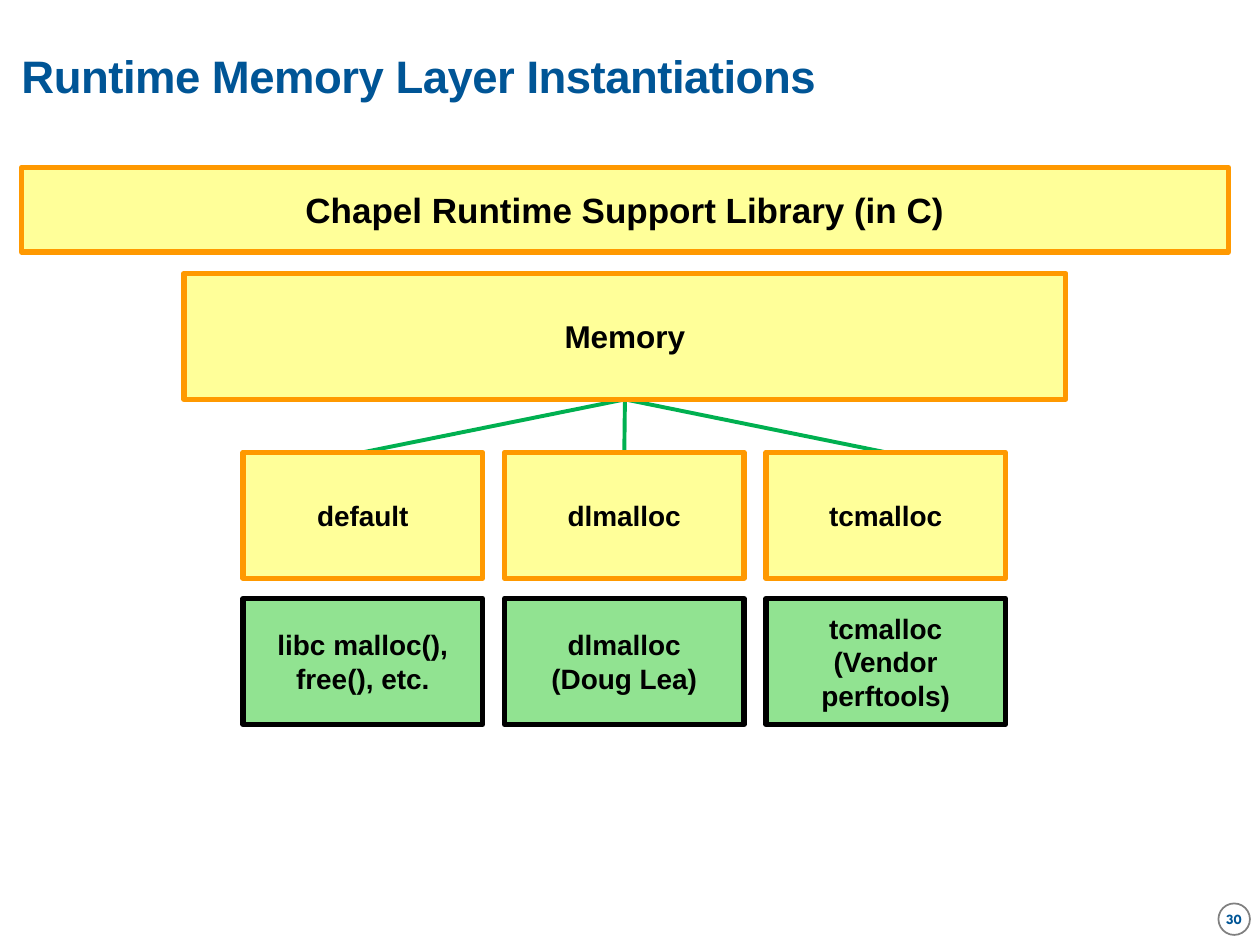
import pptx
import pptx.dml.color
import pptx.enum.shapes
import pptx.enum.text
import pptx.oxml.ns
import pptx.util
from pptx.util import Inches

COLORS = {
    "title": "005596",
    "text": "000000",
    "white": "FFFFFF",
    "badge_line": "808080",
    "layer_fill": "FFFF99",
    "layer_line": "FF9900",
    "library_fill": "91E391",
    "library_line": "000000",
    "link": "00B050",
}
SHAPES = pptx.enum.shapes.MSO_SHAPE
ALIGN = pptx.enum.text.PP_ALIGN

BOX_WIDTH, BOX_HEIGHT = 1.9, 1
COLUMN_LEFT, COLUMN_STEP = 1.93, 2.075
MEMORY_LEFT, MEMORY_TOP, MEMORY_WIDTH = 1.46, 2.17, 7
LAYER_TOP, LIBRARY_TOP = 3.59, 4.75

# Implementation layer and the library beneath it; \v is a line break
COLUMNS = [
    ("default", "libc malloc(),\vfree(), etc."),
    ("dlmalloc", "dlmalloc\n(Doug Lea)"),
    ("tcmalloc", "tcmalloc\n(Vendor\vperftools)"),
]


def rgb(name):
    return pptx.dml.color.RGBColor.from_string(COLORS[name])


def write_text(shape, text, size, color="text", font="Arial", align=ALIGN.CENTER,
               margins=(0.1, 0.05), wrap=False, line_spacing=None, tracking=None):
    """Fill a shape with bold, vertically centred text."""
    frame = shape.text_frame
    frame.text = text
    frame.word_wrap = wrap
    frame.auto_size = pptx.enum.text.MSO_AUTO_SIZE.NONE
    frame.vertical_anchor = pptx.enum.text.MSO_ANCHOR.MIDDLE
    frame.margin_left = frame.margin_right = Inches(margins[0])
    frame.margin_top = frame.margin_bottom = Inches(margins[1])
    for para in frame.paragraphs:
        para.alignment = align
        if line_spacing:
            para.line_spacing = line_spacing
        for span in para.runs:
            span.font.name = font
            span.font.size = pptx.util.Pt(size)
            span.font.bold = True
            span.font.color.rgb = rgb(color)
            if tracking:
                span._r.get_or_add_rPr().set("spc", str(int(tracking * 100)))
        # Line breaks carry their own size
        for line_break in para._p.findall(pptx.oxml.ns.qn("a:br")):
            properties = line_break.makeelement(pptx.oxml.ns.qn("a:rPr"), {"sz": str(size * 100)})
            line_break.append(properties)


def add_box(page, left, top, width, height, fill, line, line_width=3, kind=SHAPES.RECTANGLE):
    box = page.shapes.add_shape(kind, Inches(left), Inches(top), Inches(width), Inches(height))
    box.shadow.inherit = False
    box.fill.solid()
    box.fill.fore_color.rgb = rgb(fill)
    box.line.color.rgb = rgb(line)
    box.line.width = pptx.util.Pt(line_width)
    return box


def add_layer(page, text, left, top, width, height, size, style="layer"):
    box = add_box(page, left, top, width, height, style + "_fill", style + "_line")
    write_text(box, text, size)


def add_link(page, start, end):
    link = page.shapes.add_connector(
        pptx.enum.shapes.MSO_CONNECTOR.STRAIGHT, *(Inches(value) for value in start + end))
    link.line.color.rgb = rgb("link")
    link.line.width = pptx.util.Pt(2.25)
    properties = link._element.spPr
    properties.append(properties.makeelement(pptx.oxml.ns.qn("a:effectLst"), {}))


def add_title(page, text):
    title = page.shapes.title
    title.left, title.top = Inches(0.17), Inches(0.17)
    title.width, title.height = Inches(8), Inches(0.92)
    write_text(title, text, 26, color="title", align=ALIGN.LEFT, margins=(0, 0),
               wrap=True, line_spacing=0.85, tracking=-0.3)


def add_page_number(page, number):
    badge = add_box(page, 9.67, 7.17, 0.25, 0.25, "white", "badge_line", 1, SHAPES.OVAL)
    write_text(badge, number, 8, color="title", font="League Spartan", margins=(0, 0))


def main():
    deck = pptx.Presentation()
    deck.slide_width, deck.slide_height = Inches(10), Inches(7.5)
    page = deck.slides.add_slide(deck.slide_layouts[5])

    add_title(page, "Runtime Memory Layer Instantiations")
    add_page_number(page, "30")

    lefts = [COLUMN_LEFT + index * COLUMN_STEP for index in range(len(COLUMNS))]

    # Links go first so that the boxes cover their ends
    hub = (MEMORY_LEFT + MEMORY_WIDTH / 2, MEMORY_TOP + BOX_HEIGHT)
    for left in lefts:
        add_link(page, hub, (left + BOX_WIDTH / 2, LAYER_TOP))

    # Runtime library and its memory layer
    add_layer(page, "Chapel Runtime Support Library (in C)", 0.17, 1.33, 9.58, 0.67, 20)
    add_layer(page, "Memory", MEMORY_LEFT, MEMORY_TOP, MEMORY_WIDTH, BOX_HEIGHT, 18)

    # Instantiations above the libraries they use
    for left, (layer, library) in zip(lefts, COLUMNS):
        add_layer(page, layer, left, LAYER_TOP, BOX_WIDTH, BOX_HEIGHT, 16)
        add_layer(page, library, left, LIBRARY_TOP, BOX_WIDTH, BOX_HEIGHT, 16, "library")

    deck.save("out.pptx")


if __name__ == "__main__":
    main()
